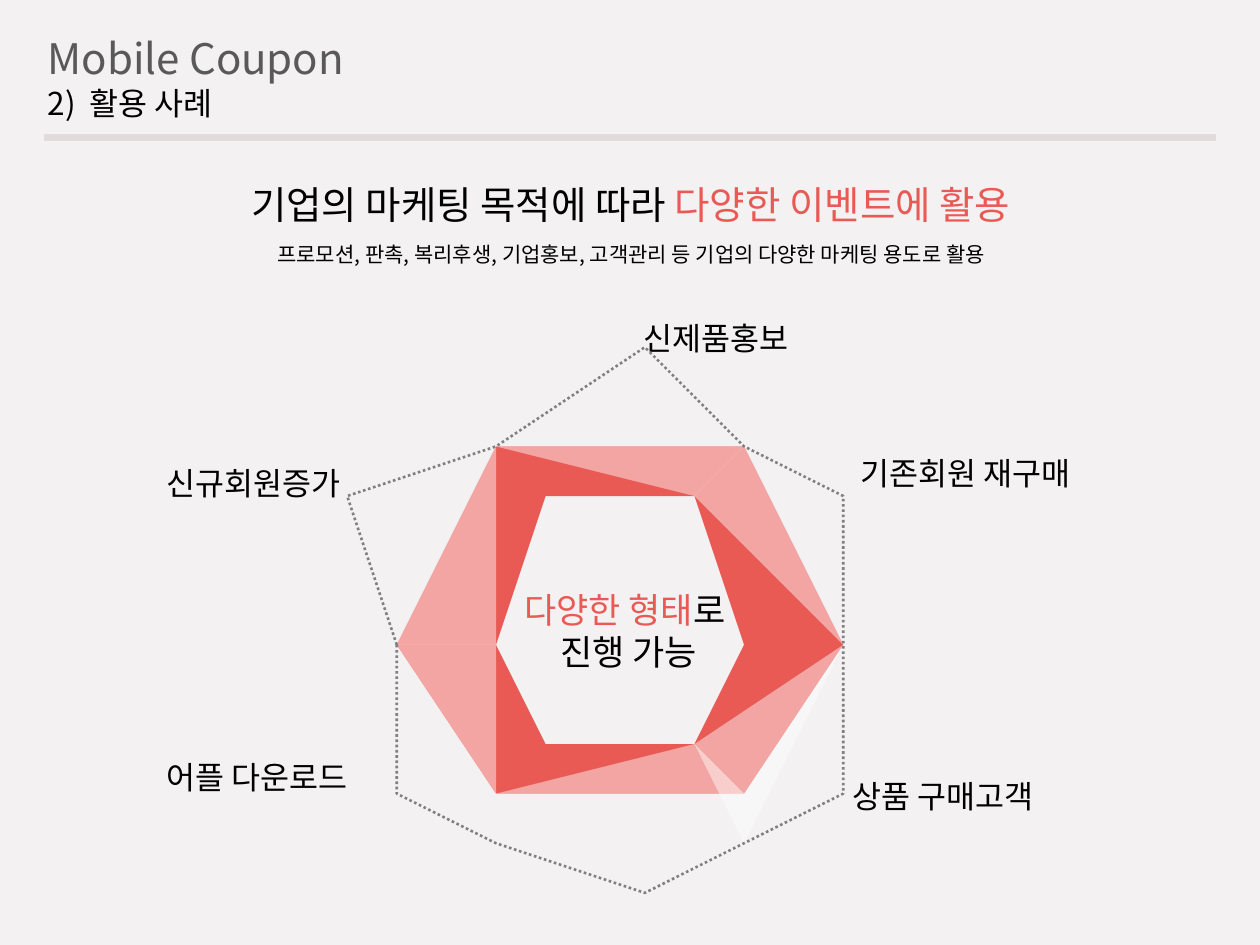
from lxml.etree import SubElement
from pptx import Presentation
from pptx.dml.color import RGBColor as Rgb
from pptx.enum.dml import MSO_LINE_DASH_STYLE as Dash
from pptx.enum.shapes import MSO_CONNECTOR as Connector
from pptx.enum.text import MSO_AUTO_SIZE as AutoSize, PP_ALIGN as Align
from pptx.oxml.ns import qn
from pptx.util import Cm, Pt

FONT = "Noto Sans CJK KR"
COLORS = {"back": "F3F1F1", "rule": "E1DBDB", "title": "595959", "text": "000000",
          "red": "E95A55", "tint": "FFFFFF", "dots": "808080"}

deck = Presentation()
deck.slide_width, deck.slide_height = Cm(25.4), Cm(19.05)
page = deck.slides.add_slide(deck.slide_layouts[6])
page.background.fill.solid()
page.background.fill.fore_color.rgb = Rgb.from_string(COLORS["back"])


def add_text(area, lines, size, align=Align.LEFT, wrap=False):
    """Each line is a list of (text, colour name) spans."""
    box = page.shapes.add_textbox(*[Cm(n) for n in area])
    frame = box.text_frame
    frame.word_wrap = wrap
    frame.auto_size = AutoSize.SHAPE_TO_FIT_TEXT
    for number, spans in enumerate(lines):
        para = frame.add_paragraph() if number else frame.paragraphs[0]
        para.alignment = align
        para.font.size = Pt(size)
        para.font.name = FONT
        defaults = para._p.pPr.find(qn("a:defRPr"))
        SubElement(defaults, qn("a:ea"), typeface=FONT)
        for text, color in spans:
            span = para.add_run()
            span.text = text
            span.font.color.rgb = Rgb.from_string(COLORS[color])


def add_polygon(points):
    """Closed outline through points given in centimetres."""
    builder = page.shapes.build_freeform(*points[0], scale=Cm(1))
    builder.add_line_segments(points[1:], close=True)
    shape = builder.convert_to_shape()
    shape.shadow.inherit = False
    return shape


# Header
add_text((0.71, 0.53, 8.2, 1.27), [[("Mobile Coupon", "title")]], 24)
add_text((0.71, 1.57, 4.34, 1.02), [[("2)  활용 사례", "text")]], 18)
rule = page.shapes.add_connector(Connector.STRAIGHT, Cm(24.51), Cm(2.77), Cm(0.89), Cm(2.77))
rule.line.color.rgb = Rgb.from_string(COLORS["rule"])
rule.line.width = Pt(3.75)
SubElement(rule._element.spPr, qn("a:effectLst"))

# Text in the middle of the ring
add_text((10.26, 11.73, 4.83, 2.82),
         [[("다양한 형태", "red"), ("로 ", "text")], [("진행 가능", "text")]],
         20, Align.CENTER, wrap=True)

# Hexagon ring: three red bands, then translucent white facets
bands = [
    [(8.18, 12.52), (9.73, 12.52), (11.18, 15.01), (14.07, 15.01), (14.71, 16.38),
     (10.39, 16.38)],
    [(10.41, 8.79), (14.83, 8.79), (14.05, 10.13), (11.2, 10.13), (9.75, 12.62),
     (8.18, 12.62)],
    [(14.78, 8.79), (17.12, 12.57), (14.78, 16.38), (14.66, 16.38), (14, 15.01),
     (15.47, 12.57), (13.97, 10.11), (13.94, 10.11)],
]
facets = [
    [(10.41, 8.79), (9.73, 12.62), (8.18, 12.62)],
    [(8.18, 12.62), (9.73, 12.62), (10.41, 16.48)],
    [(17.09, 12.62), (14.76, 16.56), (13.94, 15.19)],
    [(14.91, 8.74), (17.15, 12.57), (17.12, 12.57), (14.12, 10.08)],
    [(14.86, 8.74), (14.1, 10.08), (10.41, 8.74)],
    [(13.94, 15.24), (14.71, 16.41), (10.34, 16.43)],
]
for color, outlines in (("red", bands), ("tint", facets)):
    for points in outlines:
        piece = add_polygon(points)
        piece.fill.solid()
        piece.fill.fore_color.rgb = Rgb.from_string(COLORS[color])
        piece.line.fill.background()
        if color == "tint":
            paint = piece._element.spPr.find(qn("a:solidFill"))
            SubElement(paint[0], qn("a:alpha"), val="46000")

# Labels around the ring
for left, top, width, label in (
    (3.1, 9.22, 4.04, "신규회원증가"),
    (12.73, 6.3, 3.45, "신제품홍보"),
    (17.09, 9.02, 4.8, "기존회원 재구매"),
    (3.1, 15.16, 4.22, "어플 다운로드"),
    (16.94, 15.54, 4.22, "상품 구매고객"),
):
    add_text((left, top, width, 1.02), [[(label, "text")]], 18)

# Dotted star outline
star = add_polygon([
    (8.23, 12.67), (7.34, 10.01), (10.39, 8.86), (12.67, 7.32), (14.88, 8.79), (16.94, 9.63),
    (17.15, 12.67), (16.56, 16.08), (14.94, 16.51), (12.9, 18.06), (10.44, 16.51), (7.59, 15.6),
])
star.fill.background()
star.line.color.rgb = Rgb.from_string(COLORS["dots"])
star.line.width = Pt(1.5)
star.line.dash_style = Dash.ROUND_DOT

# Headline
add_text((3.84, 3.53, 17.75, 1.19),
         [[("기업의 마케팅 목적에 따라 ", "text"), ("다양한 이벤트에 활용", "red")]],
         22, Align.CENTER)
add_text((4.42, 4.75, 16.61, 0.76),
         [[("프로모션, 판촉, 복리후생, 기업홍보, 고객관리 등 기업의 다양한 마케팅 용도로 활용", "text")]],
         12, Align.CENTER)

deck.save("out.pptx")
